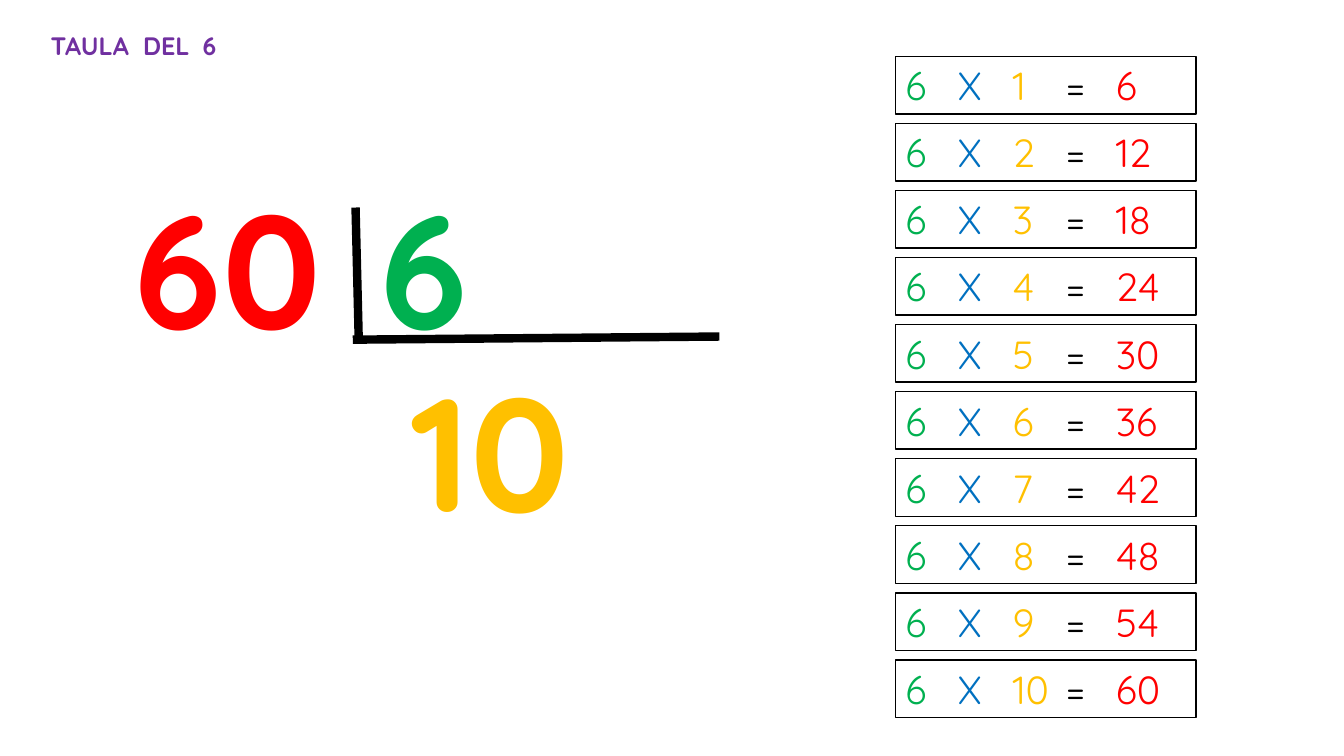
from lxml import etree
from pptx import Presentation
from pptx.dml.color import RGBColor
from pptx.enum.shapes import MSO_CONNECTOR, MSO_SHAPE
from pptx.enum.text import MSO_ANCHOR, MSO_AUTO_SIZE, PP_ALIGN
from pptx.oxml.ns import qn
from pptx.util import Cm, Pt

RECTANGLE = MSO_SHAPE.RECTANGLE
STRAIGHT = MSO_CONNECTOR.STRAIGHT
MIDDLE = MSO_ANCHOR.MIDDLE
FIXED = MSO_AUTO_SIZE.NONE
LEFT, CENTER = PP_ALIGN.LEFT, PP_ALIGN.CENTER

BLACK = RGBColor(0x00, 0x00, 0x00)
WHITE = RGBColor(0xFF, 0xFF, 0xFF)
GREEN = RGBColor(0x00, 0xB0, 0x50)
BLUE = RGBColor(0x00, 0x70, 0xC0)
AMBER = RGBColor(0xFF, 0xC0, 0x00)
RED = RGBColor(0xFF, 0x00, 0x00)
PURPLE = RGBColor(0x70, 0x30, 0xA0)

FONT = "Quicksand"
FACTOR = 6
TITLE_TABS = (2.33, 3.83)
FACT_TABS = (1.32, 2.7, 4.05, 5.3)


def add_span(para, text, size, color, bold=False):
    span = para.add_run()
    span.text = text
    span.font.name = FONT
    span.font.size = Pt(size)
    span.font.bold = bold
    span.font.color.rgb = color


def set_tabs(para, stops):
    tab_list = etree.SubElement(para._p.get_or_add_pPr(), qn("a:tabLst"))
    for stop in stops:
        etree.SubElement(tab_list, qn("a:tab"), pos=str(Cm(stop)), algn="l")


def fill_frame(shape, align):
    frame = shape.text_frame
    frame.word_wrap = True
    frame.auto_size = FIXED
    frame.vertical_anchor = MIDDLE
    para = frame.paragraphs[0]
    para.alignment = align
    return para


def place_title(slide, left, top, width, height):
    title = slide.shapes.title
    title.left, title.top = Cm(left), Cm(top)
    title.width, title.height = Cm(width), Cm(height)
    para = fill_frame(title, LEFT)
    set_tabs(para, TITLE_TABS)
    add_span(para, "TAULA\tDEL\t6", 18, PURPLE, bold=True)


def add_number(slide, text, color, left, top, width):
    box = slide.shapes.add_textbox(Cm(left), Cm(top), Cm(width), Cm(5.18))
    add_span(fill_frame(box, CENTER), text, 115, color, bold=True)


def add_division(slide, left, top):
    add_number(slide, "6", GREEN, left + 6.17, top, 3)
    bracket = slide.shapes.add_group_shape()
    for x1, y1, x2, y2 in ((5.94, 1.14, 6.02, 4.42), (5.87, 4.47, 15.11, 4.39)):
        line = bracket.shapes.add_connector(
            STRAIGHT, Cm(left + x1), Cm(top + y1), Cm(left + x2), Cm(top + y2))
        line.line.color.rgb = BLACK
        line.line.width = Pt(6)
        etree.SubElement(line._element.spPr, qn("a:effectLst"))
    add_number(slide, "60", RED, left, top, 5.44)
    add_number(slide, "10", AMBER, left + 6.4, top + 4.62, 5.89)


def add_fact(slide, multiplier, left, top, width, height):
    box = slide.shapes.add_shape(RECTANGLE, Cm(left), Cm(top), Cm(width), Cm(height))
    box.shadow.inherit = False
    box.fill.solid()
    box.fill.fore_color.rgb = WHITE
    box.line.color.rgb = BLACK
    box.line.width = Pt(1)
    para = fill_frame(box, LEFT)
    set_tabs(para, FACT_TABS)
    add_span(para, f"{FACTOR}\t", 28, GREEN)
    add_span(para, "X\t", 28, BLUE)
    add_span(para, f"{multiplier}\t", 28, AMBER)
    add_span(para, "=\t", 28, BLACK)
    add_span(para, str(FACTOR * multiplier), 28, RED)


def add_times_table(slide, left, top, width, pitch):
    for row in range(10):
        add_fact(slide, row + 1, left, top + row * pitch, width, 1.45)


def main():
    deck = Presentation()
    deck.slide_width, deck.slide_height = Cm(33.87), Cm(19.05)
    slide = deck.slides.add_slide(deck.slide_layouts[5])
    place_title(slide, 1.02, 0.64, 6.68, 1.02)
    add_division(slide, 3.02, 4.09)
    add_times_table(slide, 22.57, 1.42, 7.57, 1.69)
    deck.save("out.pptx")


if __name__ == "__main__":
    main()
